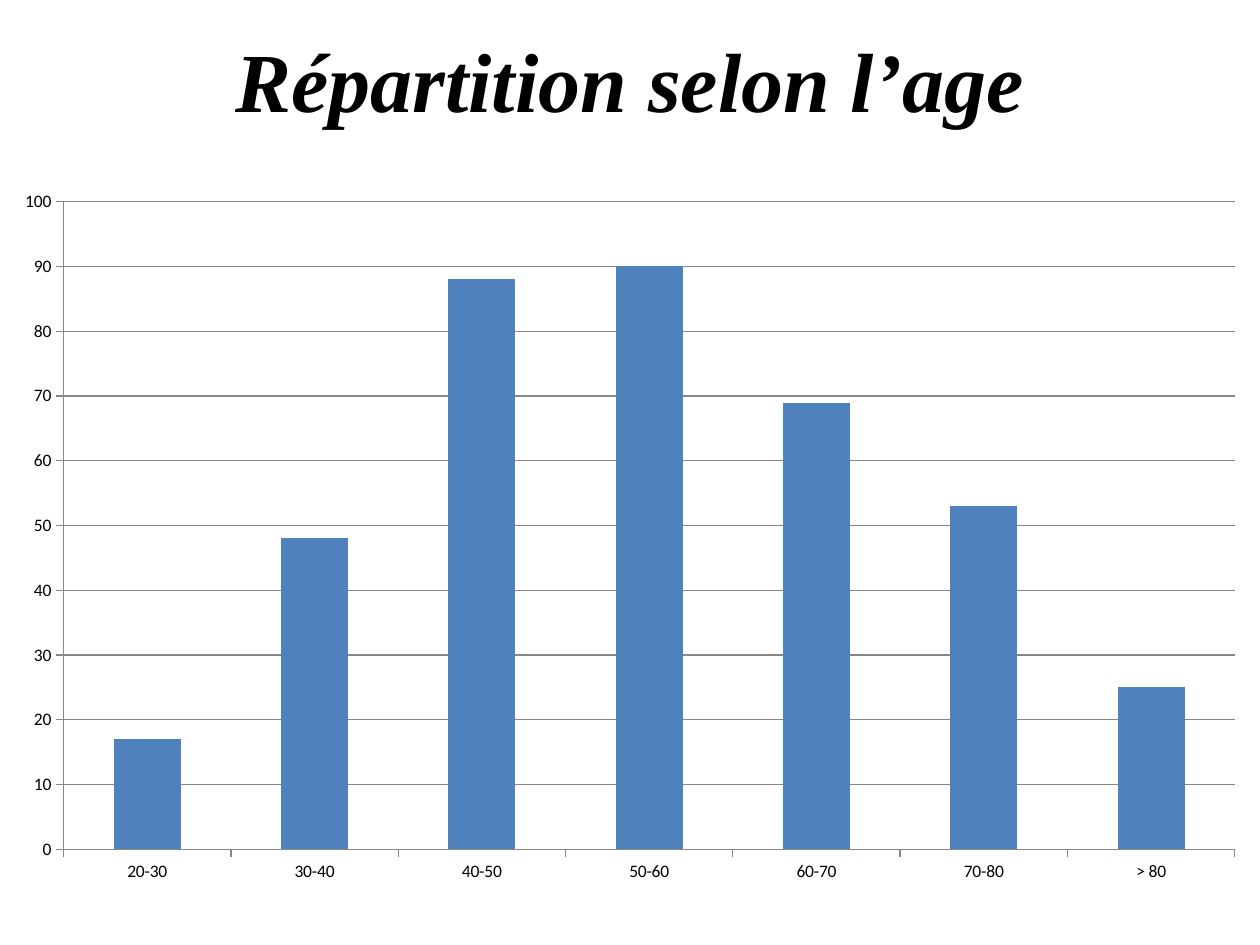
from pptx import Presentation
from pptx.chart.data import CategoryChartData
from pptx.dml.color import RGBColor
from pptx.enum.chart import XL_CHART_TYPE, XL_TICK_MARK
from pptx.enum.text import MSO_ANCHOR, PP_ALIGN
from pptx.util import Cm, Pt

STACKED = XL_CHART_TYPE.COLUMN_STACKED
OUTSIDE = XL_TICK_MARK.OUTSIDE
MIDDLE = MSO_ANCHOR.MIDDLE
CENTER = PP_ALIGN.CENTER

BLACK = RGBColor(0x00, 0x00, 0x00)
GRAY = RGBColor(0x87, 0x87, 0x87)
BLUE = RGBColor(0x4F, 0x81, 0xBD)

AGES = ["20-30", "30-40", "40-50", "50-60", "60-70", "70-80", "> 80"]
COUNTS = [17, 48, 88, 90, 69, 53, 25]

prs = Presentation()
prs.slide_width = Cm(25.4)
prs.slide_height = Cm(19.05)
s = prs.slides.add_slide(prs.slide_layouts[6])

# Title
tf = s.shapes.add_textbox(Cm(1.27), Cm(0), Cm(22.86), Cm(3.18)).text_frame
tf.word_wrap = True
tf.vertical_anchor = MIDDLE
p = tf.paragraphs[0]
p.text = "Répartition selon l’age"
p.alignment = CENTER
p.font.name = "Times New Roman"
p.font.size = Pt(48)
p.font.bold = True
p.font.italic = True
p.font.color.rgb = BLACK

# Age distribution chart
data = CategoryChartData()
data.categories = AGES
data.add_series("Series 1", COUNTS)
chart = s.shapes.add_chart(
    STACKED, Cm(0), Cm(3.58), Cm(25.4), Cm(14.48), data
).chart
chart.has_title = False
chart.has_legend = False
chart.font.name = "Calibri"
chart.font.size = Pt(10)
chart.font.color.rgb = BLACK

plot = chart.plots[0]
plot.gap_width = 150
plot.overlap = 100
plot.vary_by_categories = False
fill = plot.series[0].format.fill
fill.solid()
fill.fore_color.rgb = BLUE

value_axis = chart.value_axis
value_axis.minimum_scale = 0
value_axis.maximum_scale = 100
value_axis.major_unit = 10
value_axis.has_major_gridlines = True

for axis in (chart.category_axis, value_axis):
    axis.major_tick_mark = OUTSIDE
for part in (chart.category_axis, value_axis, value_axis.major_gridlines):
    part.format.line.color.rgb = GRAY
    part.format.line.width = Pt(0.75)

prs.save("out.pptx")
